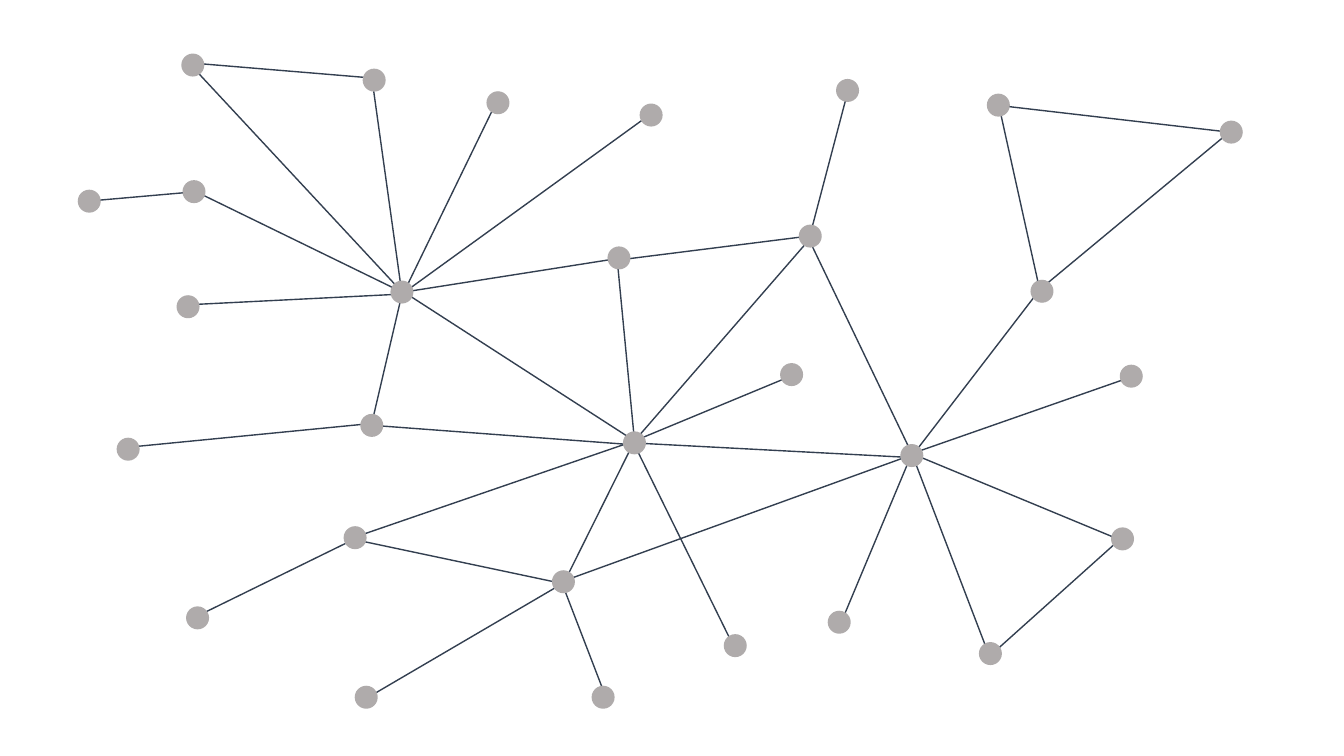
"""Build a slide showing a network of nodes gathered around three hubs."""
from lxml.etree import SubElement
from pptx import Presentation
from pptx.dml.color import RGBColor
from pptx.enum.shapes import MSO_CONNECTOR as Connector, MSO_SHAPE as Shape
from pptx.oxml.ns import qn
from pptx.util import Cm, Pt

NODE_CENTRES = {
    "west hub": (10.13, 7.36),
    "west far left": (2.25, 5.07),
    "west left": (4.89, 4.83),
    "west top left": (4.86, 1.64),
    "west top": (9.43, 2.02),
    "west top right": (12.55, 2.59),
    "west far right": (16.41, 2.9),
    "west low left": (4.74, 7.73),
    "west bottom": (9.37, 10.72),
    "west outer": (3.23, 11.32),
    "middle hub": (15.99, 11.16),
    "middle top": (15.6, 6.5),
    "middle right": (19.95, 9.44),
    "middle bottom": (18.53, 16.27),
    "south left": (8.95, 13.55),
    "south outer": (4.98, 15.57),
    "south": (14.2, 14.66),
    "south low left": (9.23, 17.57),
    "south low right": (15.2, 17.57),
    "north": (20.42, 5.95),
    "north top": (21.36, 2.28),
    "east hub": (22.98, 11.48),
    "east top": (26.26, 7.34),
    "east top left": (25.16, 2.65),
    "east top right": (31.03, 3.33),
    "east right": (28.51, 9.48),
    "east low right": (28.29, 13.58),
    "east bottom": (24.96, 16.47),
    "east low left": (21.15, 15.68),
}
LINKS = [
    ("west hub", "S", "west far right", "W"),
    ("west hub", "SE", "west top left", "W"),
    ("west hub", "S", "west top", "W"),
    ("west hub", "E", "west top right", "W"),
    ("west hub", "", "west left", "E"),
    ("west hub", "S", "west low left", "N"),
    ("west hub", "S", "west bottom", "N"),
    ("west hub", "E", "middle top", "E"),
    ("west hub", "E", "middle hub", "N"),
    ("west top left", "N", "west top", "N"),
    ("west left", "E", "west far left", "W"),
    ("west outer", "N", "west bottom", "N"),
    ("middle hub", "N", "middle top", "W"),
    ("middle hub", "N", "middle right", "SW"),
    ("middle hub", "S", "middle bottom", "W"),
    ("middle hub", "S", "west bottom", "E"),
    ("middle hub", "N", "south left", "W"),
    ("middle hub", "N", "south", "S"),
    ("middle hub", "N", "north", "E"),
    ("middle hub", "W", "east hub", "S"),
    ("south left", "E", "south outer", "N"),
    ("south left", "S", "south", "S"),
    ("south", "E", "south low left", "E"),
    ("south", "W", "south low right", "NE"),
    ("south", "W", "east hub", "W"),
    ("north", "W", "middle top", "S"),
    ("north", "N", "north top", "S"),
    ("east hub", "N", "north", "SW"),
    ("east hub", "NE", "east top", "NW"),
    ("east hub", "N", "east right", "E"),
    ("east hub", "N", "east low right", "S"),
    ("east hub", "N", "east bottom", "W"),
    ("east hub", "N", "east low left", "E"),
    ("east low right", "N", "east bottom", "E"),
    ("east top", "W", "east top left", "N"),
    ("east top", "NW", "east top right", "W"),
    ("east top left", "W", "east top right", "W"),
]
SLIDE_WIDTH, SLIDE_HEIGHT = 33.87, 19.05
NODE_SIZE = 0.58
SIDE_OFFSET = 0.05
NODE_GREY = RGBColor(0xAF, 0xAB, 0xAB)
LINK_BLUE = RGBColor(0x33, 0x3F, 0x50)


def anchor(node, sides):
    across, down = NODE_CENTRES[node]
    across += SIDE_OFFSET * (("E" in sides) - ("W" in sides))
    down += SIDE_OFFSET * (("S" in sides) - ("N" in sides))
    return Cm(across), Cm(down)


def draw_link(page, start, start_sides, end, end_sides):
    link = page.shapes.add_connector(
        Connector.STRAIGHT, *anchor(start, start_sides), *anchor(end, end_sides))
    link.line.color.rgb = LINK_BLUE
    link.line.width = Pt(1)
    SubElement(link._element.spPr, qn("a:effectLst"))


def draw_node(page, centre):
    left, top = (Cm(value - NODE_SIZE / 2) for value in centre)
    node = page.shapes.add_shape(Shape.OVAL, left, top, Cm(NODE_SIZE), Cm(NODE_SIZE))
    node.shadow.inherit = False
    node.fill.solid()
    node.fill.fore_color.rgb = NODE_GREY
    node.line.fill.background()


def main():
    deck = Presentation()
    deck.slide_width, deck.slide_height = Cm(SLIDE_WIDTH), Cm(SLIDE_HEIGHT)
    page = deck.slides.add_slide(deck.slide_layouts[6])
    for link in LINKS:
        draw_link(page, *link)
    for centre in NODE_CENTRES.values():
        draw_node(page, centre)
    deck.save("out.pptx")


if __name__ == "__main__":
    main()
